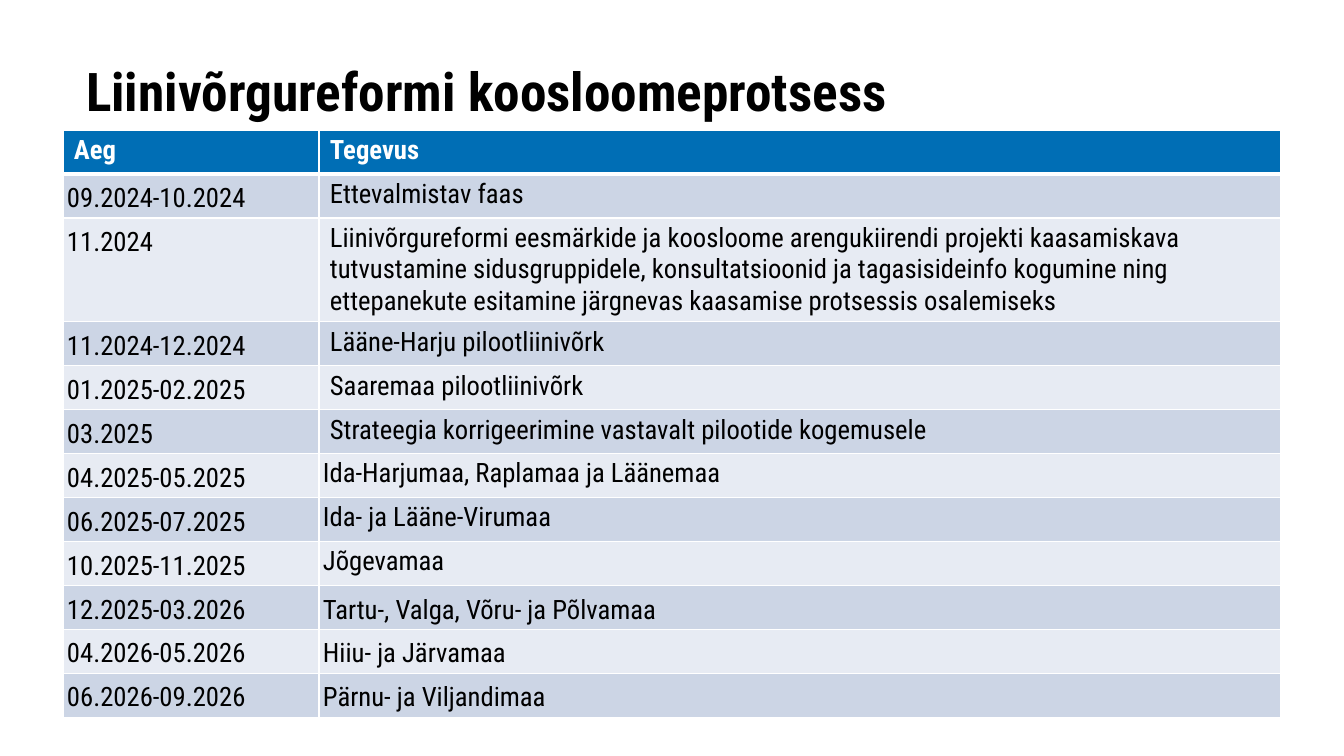
from dataclasses import dataclass

from lxml.etree import SubElement
from pptx import Presentation
from pptx.dml.color import RGBColor
from pptx.enum.text import MSO_ANCHOR, MSO_AUTO_SIZE, PP_ALIGN
from pptx.oxml.ns import qn
from pptx.util import Pt

EMU_PER_PX = 8572


@dataclass(frozen=True)
class Theme:
    font: str = "Roboto Condensed"
    ink: str = "000000"
    paper: str = "FFFFFF"
    header: str = "006EB5"
    bands: tuple = ("CCD5E5", "E7EBF3")
    title_size: int = 36
    table_size: int = 18
    rule: int = 1
    header_rule: int = 3


def px(length):
    return length * EMU_PER_PX


class SlideBuilder:
    def __init__(self, theme, width, height):
        self.theme = theme
        self.deck = Presentation()
        self.deck.slide_width, self.deck.slide_height = px(width), px(height)
        self.slide = self.deck.slides.add_slide(self.deck.slide_layouts[5])

    def style(self, paragraph, size, colour, bold):
        for run in paragraph.runs:
            run.font.name = self.theme.font
            run.font.size = Pt(size)
            run.font.bold = bold
            run.font.color.rgb = RGBColor.from_string(colour)

    def title(self, wording, left, top, width, height):
        heading = self.slide.shapes.title
        heading.left, heading.top = px(left), px(top)
        heading.width, heading.height = px(width), px(height)
        frame = heading.text_frame
        frame.text = wording
        frame.word_wrap = True
        frame.auto_size = MSO_AUTO_SIZE.NONE
        frame.vertical_anchor = MSO_ANCHOR.TOP
        frame.margin_left = frame.margin_right = px(11)
        frame.margin_top, frame.margin_bottom = px(6), px(5)
        line = frame.paragraphs[0]
        line.alignment = PP_ALIGN.LEFT
        line.line_spacing = 0.88
        self.style(line, self.theme.title_size, self.theme.ink, True)

    def borders(self, cell, top, bottom):
        properties = cell._tc.get_or_add_tcPr()
        rule = self.theme.rule
        for side, weight in (("L", rule), ("R", rule), ("T", top), ("B", bottom)):
            edge = SubElement(properties, qn(f"a:ln{side}"), w=str(Pt(weight)))
            paint = SubElement(edge, qn("a:solidFill"))
            SubElement(paint, qn("a:srgbClr"), val=self.theme.paper)

    def cell(self, cell, wording, fill, colour, bold, tight, spaced):
        theme = self.theme
        cell.text = wording
        cell.vertical_anchor = MSO_ANCHOR.TOP
        cell.margin_left = cell.margin_right = px(4 if tight else 11)
        cell.margin_top = cell.margin_bottom = px(4 if tight else 5)
        line = cell.text_frame.paragraphs[0]
        if spaced:
            line.alignment = PP_ALIGN.JUSTIFY
            line.line_spacing = 1.15
            line.space_after = Pt(10)
        self.style(line, theme.table_size, colour, bold)
        cell.fill.solid()
        cell.fill.fore_color.rgb = RGBColor.from_string(fill)

    def table(self, headings, stages, left, top, widths, row_height):
        theme = self.theme
        count = len(stages) + 1
        schedule = self.slide.shapes.add_table(
            count, len(headings), px(left), px(top),
            px(sum(widths)), px(row_height * count),
        ).table
        for column, width in zip(schedule.columns, widths):
            column.width = px(width)
        for row in schedule.rows:
            row.height = px(row_height)
        for index, row in enumerate(schedule.rows):
            top_rule = theme.header_rule if index == 1 else theme.rule
            bottom_rule = theme.header_rule if index == 0 else theme.rule
            for cell in row.cells:
                self.borders(cell, top_rule, bottom_rule)
        for cell, heading in zip(schedule.rows[0].cells, headings):
            self.cell(cell, heading, theme.header, theme.paper, True, False, False)
        for index, (period, activity, tight, spaced) in enumerate(stages):
            period_cell, activity_cell = schedule.rows[index + 1].cells
            band = theme.bands[index % 2]
            self.cell(period_cell, period, band, theme.ink, False, True, True)
            self.cell(activity_cell, activity, band, theme.ink, False, tight, spaced)


HEADINGS = ("Aeg", "Tegevus")
ROOMY, TIGHT, SPACED = (False, False), (True, False), (True, True)
STAGES = [
    ("09.2024-10.2024", "Ettevalmistav faas", *ROOMY),
    (
        "11.2024",
        "Liinivõrgureformi eesmärkide ja koosloome arengukiirendi projekti "
        "kaasamiskava tutvustamine sidusgruppidele, konsultatsioonid ja "
        "tagasisideinfo kogumine ning ettepanekute esitamine järgnevas "
        "kaasamise protsessis osalemiseks",
        *ROOMY,
    ),
    ("11.2024-12.2024", "Lääne-Harju pilootliinivõrk", *ROOMY),
    ("01.2025-02.2025", "Saaremaa pilootliinivõrk", *ROOMY),
    ("03.2025", "Strateegia korrigeerimine vastavalt pilootide kogemusele", *ROOMY),
    ("04.2025-05.2025", "Ida-Harjumaa, Raplamaa ja Läänemaa", *TIGHT),
    ("06.2025-07.2025", "Ida- ja Lääne-Virumaa", *TIGHT),
    ("10.2025-11.2025", "Jõgevamaa", *TIGHT),
    ("12.2025-03.2026", "Tartu-, Valga, Võru- ja Põlvamaa", *SPACED),
    ("04.2026-05.2026", "Hiiu- ja Järvamaa", *SPACED),
    ("06.2026-09.2026", "Pärnu- ja Viljandimaa", *SPACED),
]


def main():
    builder = SlideBuilder(Theme(), 1344, 756)
    builder.title("Liinivõrgureformi koosloomeprotsess", 75, 60, 1183, 119)
    builder.table(HEADINGS, STAGES, 63, 130, (256, 962), 44)
    builder.deck.save("out.pptx")


if __name__ == "__main__":
    main()
